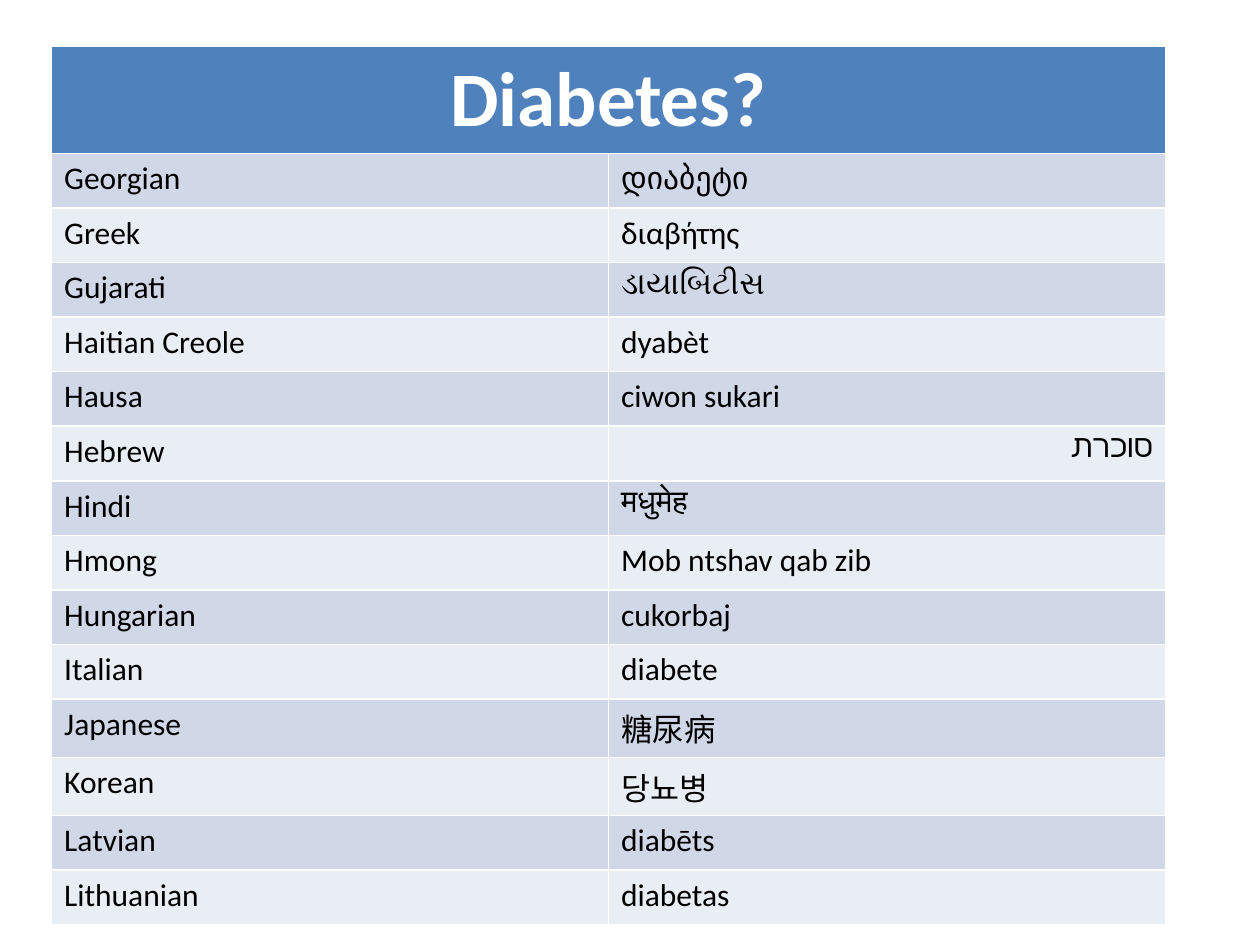
"""Build a slide with a table of the word for diabetes in fourteen languages."""
from pptx import Presentation
from pptx.dml.color import RGBColor
from pptx.enum.text import PP_ALIGN as Align
from pptx.util import Inches, Pt

HEADER, BANDS = "4F81BD", ("D0D8E8", "E9EDF4")
WORDS = [
    ("Georgian", "დიაბეტი"),
    ("Greek", "διαβήτης"),
    ("Gujarati", "ડાયાબિટીસ"),
    ("Haitian Creole ", "dyabèt"),
    ("Hausa", "ciwon sukari"),
    ("Hebrew", "סוכרת"),
    ("Hindi", "मधुमेह"),
    ("Hmong", "Mob ntshav qab zib"),
    ("Hungarian", "cukorbaj"),
    ("Italian", "diabete"),
    ("Japanese ", "糖尿病"),
    ("Korean", "당뇨병"),
    ("Latvian", "diabēts"),
    ("Lithuanian", "diabetas"),
]


def fill_cell(cell, text, fill, color, align=None, **font):
    cell.fill.solid()
    cell.fill.fore_color.rgb = RGBColor.from_string(fill)
    p = cell.text_frame.paragraphs[0]
    p.alignment = align
    r = p.add_run()
    r.text = text
    r.font.color.rgb = RGBColor.from_string(color)
    for name, value in font.items():
        setattr(r.font, name, value)


prs = Presentation()
prs.slide_width, prs.slide_height = Inches(10), Inches(7.5)
s = prs.slides.add_slide(prs.slide_layouts[6])

frame = s.shapes.add_table(len(WORDS) + 1, 2, Inches(0.41), Inches(0.37),
                           Inches(8.84), Inches(6.92))
table = frame.table
for row in table.rows:
    row.height = Pt(31.2)
frame.height = Inches(6.92)

title = table.cell(0, 0)
title.merge(table.cell(0, 1))
fill_cell(title, "Diabetes?", HEADER, "FFFFFF", Align.CENTER,
          size=Pt(44), bold=True, name="Calibri")

for i, (language, word) in enumerate(WORDS):
    word_align = Align.RIGHT if language == "Hebrew" else None
    for col, (text, align) in enumerate([(language, None), (word, word_align)]):
        fill_cell(table.cell(i + 1, col), text, BANDS[i % 2], "000000", align,
                  size=Pt(18), bold=False, name="Calibri")

prs.save("out.pptx")
